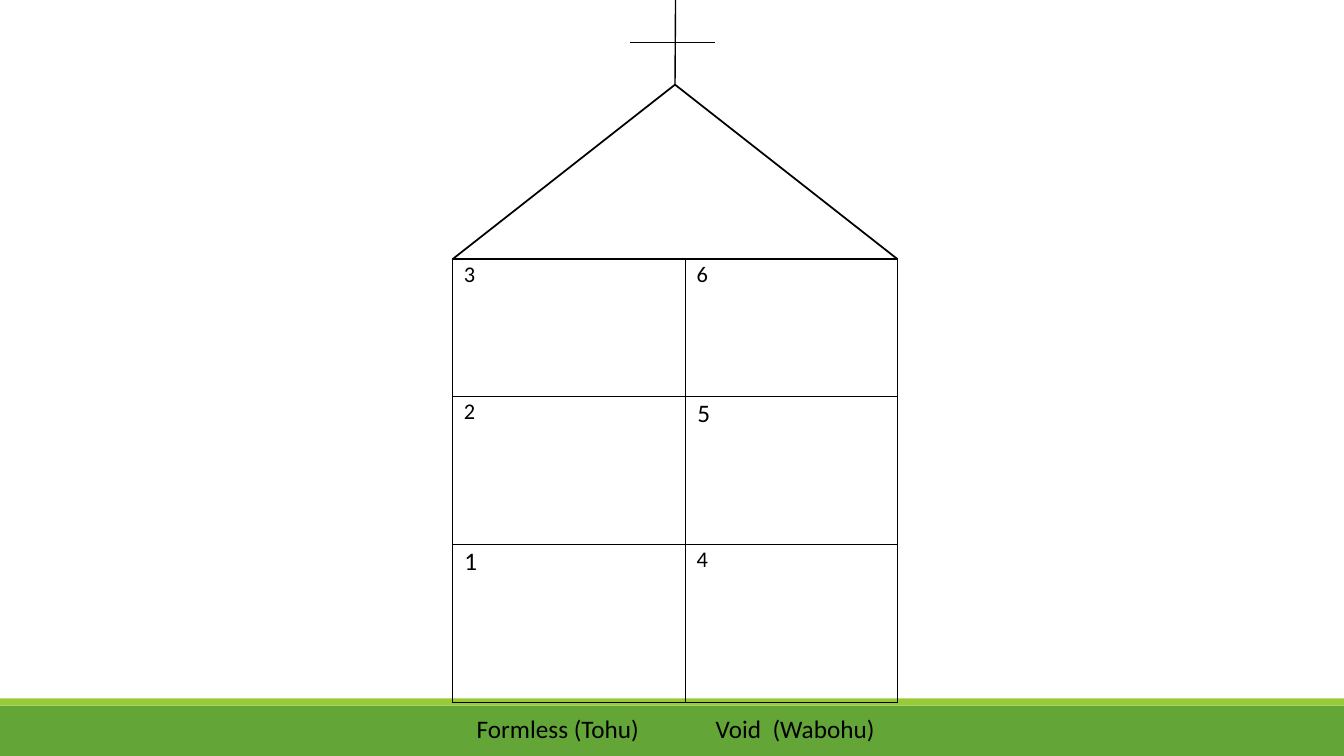
from dataclasses import dataclass

from lxml import etree
from pptx import Presentation
from pptx.dml.color import RGBColor
from pptx.enum import shapes, text
from pptx.oxml import ns
from pptx.util import Emu, Pt

PX = 9144  # EMU per px, 100 px to the inch


@dataclass(frozen=True)
class Theme:
    ink: str = "000000"
    paper: str = "FFFFFF"
    grass: str = "63A537"
    grass_edge: str = "99CB38"
    font: str = "Calibri"
    small: int = 16
    large: int = 18
    thin: float = 0.5
    cross: float = 1
    roof: float = 1.25


@dataclass(frozen=True)
class Box:
    x: int
    y: int
    w: int
    h: int

    def emu(self) -> tuple[Emu, ...]:
        return tuple(px(v) for v in (self.x, self.y, self.w, self.h))


@dataclass(frozen=True)
class Room:
    day: int
    size: int


@dataclass(frozen=True)
class Label:
    words: str
    box: Box


THEME = Theme()
SLIDE = Box(0, 0, 1333, 750)
HOUSE = Box(449, 257, 441, 440)
ROOF = Box(449, 84, 441, 173)
COLUMNS = (231, 210)
FLOORS = (136, 147, 157)
ROOMS = (
    (Room(3, THEME.small), Room(6, THEME.small)),
    (Room(2, THEME.small), Room(5, THEME.large)),
    (Room(1, THEME.large), Room(4, THEME.small)),
)
LABELS = (
    Label("Formless (Tohu)", Box(463, 703, 207, 40)),
    Label("Void  (Wabohu)", Box(700, 703, 191, 40)),
)


def px(v: int) -> Emu:
    return Emu(v * PX)


def rgb(color: str) -> RGBColor:
    return RGBColor.from_string(color)


def write(tf, words: str, *, size: int, spacing: float | None = None) -> None:
    p = tf.paragraphs[0]
    p.line_spacing = spacing
    r = p.add_run()
    r.text = words
    r.font.name = THEME.font
    r.font.size = Pt(size)
    r.font.color.rgb = rgb(THEME.ink)


def add_block(s, kind, box: Box, fill: str, line: float | None = None):
    sp = s.shapes.add_shape(kind, *box.emu())
    sp.shadow.inherit = False
    sp.fill.solid()
    sp.fill.fore_color.rgb = rgb(fill)
    if line is None:
        sp.line.fill.background()
    else:
        sp.line.color.rgb = rgb(THEME.ink)
        sp.line.width = Pt(line)
    return sp


def add_line(s, x1: int, y1: int, x2: int, y2: int):
    ends = (px(v) for v in (x1, y1, x2, y2))
    line = s.shapes.add_connector(shapes.MSO_CONNECTOR.STRAIGHT, *ends)
    line.line.color.rgb = rgb(THEME.ink)
    line.line.width = Pt(THEME.cross)
    etree.SubElement(line._element.spPr, ns.qn("a:effectLst"))
    return line


def set_borders(cell, widths: dict[str, float]) -> None:
    """Draw solid borders; the sides must come in the order L, R, T, B."""
    tc_pr = cell._tc.get_or_add_tcPr()
    for side, width in widths.items():
        ln = etree.SubElement(tc_pr, ns.qn(f"a:ln{side}"), w=str(Pt(width)))
        fill = etree.SubElement(ln, ns.qn("a:solidFill"))
        etree.SubElement(fill, ns.qn("a:srgbClr"), val=THEME.ink)


def add_house(s) -> None:
    frame = s.shapes.add_table(len(FLOORS), len(COLUMNS), *HOUSE.emu())
    table = frame.table
    table.first_row = table.horz_banding = False
    for column, width in zip(table.columns, COLUMNS):
        column.width = px(width)
    for row, height in zip(table.rows, FLOORS):
        row.height = px(height)
    for i, floor in enumerate(ROOMS):
        for j, room in enumerate(floor):
            cell = table.cell(i, j)
            cell.margin_left = cell.margin_right = px(6)
            cell.margin_top = cell.margin_bottom = 0
            write(cell.text_frame, f" {room.day}", size=room.size, spacing=1.07)
            middle = 2 * THEME.thin
            set_borders(cell, {
                "L": middle if j else THEME.thin,
                "R": THEME.thin if j else middle,
                "T": THEME.thin,
                "B": THEME.thin,
            })
            cell.fill.background()


def add_label(s, label: Label) -> None:
    tf = s.shapes.add_textbox(*label.box.emu()).text_frame
    tf.word_wrap = True
    tf.auto_size = text.MSO_AUTO_SIZE.SHAPE_TO_FIT_TEXT
    write(tf, label.words, size=THEME.large)


def main() -> None:
    prs = Presentation()
    prs.slide_width, prs.slide_height = px(SLIDE.w), px(SLIDE.h)
    s = prs.slides.add_slide(prs.slide_layouts[6])

    kinds = shapes.MSO_SHAPE
    add_block(s, kinds.RECTANGLE, Box(0, 700, SLIDE.w, 50), THEME.grass)
    add_block(s, kinds.RECTANGLE, Box(0, 693, SLIDE.w, 7), THEME.grass_edge)
    add_house(s)
    roof = add_block(s, kinds.ISOSCELES_TRIANGLE, ROOF, THEME.paper, THEME.roof)
    post = add_line(s, 670, 0, 670, ROOF.y)
    post.end_connect(roof, 0)
    add_line(s, 625, 42, 709, 42)
    for label in LABELS:
        add_label(s, label)

    prs.save("out.pptx")


if __name__ == "__main__":
    main()
